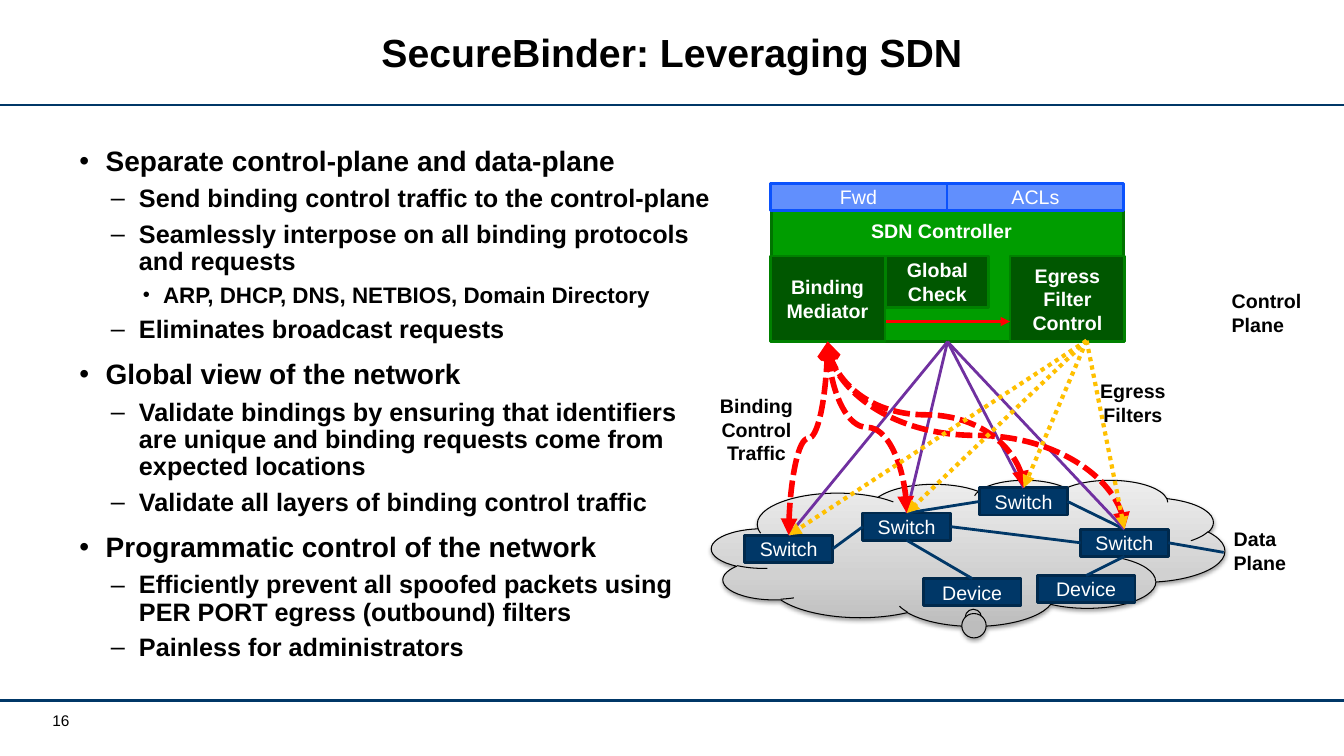
from lxml.etree import SubElement
from pptx import Presentation
from pptx.dml.color import RGBColor
from pptx.enum.dml import MSO_LINE
from pptx.enum.shapes import MSO_CONNECTOR, MSO_SHAPE
from pptx.enum.text import MSO_ANCHOR, PP_ALIGN
from pptx.oxml import parse_xml
from pptx.oxml.ns import nsdecls, qn
from pptx.util import Inches, Pt

NAVY, PURPLE, RED, AMBER = "003767", "7030A0", "FF0000", "FFC000"
GREEN, DARK_GREEN, BLUE = "009D00", "005700", "618FFD"
BLACK, WHITE = "000000", "FFFFFF"
COLUMNS, ROWS = 133.33, 75
TOP, LEFT, BOTTOM, RIGHT = range(4)

# Per level: left indent, hanging indent, size, space before, bullet, bullet percent
LEVELS = [(0.26, 0.26, 20, 12, "•", 100),
          (0.59, 0.28, 18, 6, "–", 100),
          (0.83, 0.2, 16, 6, "•", 90)]
POINTS = [
    (0, "Separate control-plane and data-plane"),
    (1, "Send binding control traffic to the control-plane"),
    (1, "Seamlessly interpose on all binding protocols and requests"),
    (2, "ARP, DHCP, DNS, NETBIOS, Domain Directory"),
    (1, "Eliminates broadcast requests"),
    (0, "Global view of the network"),
    (1, "Validate bindings by ensuring that identifiers are unique and "
        "binding requests come from expected locations"),
    (1, "Validate all layers of binding control traffic"),
    (0, "Programmatic control of the network"),
    (1, "Efficiently prevent all spoofed packets using PER PORT egress (outbound) filters"),
    (1, "Painless for administrators"),
]


def cells(count):
    """Length of a number of grid cells; a cell is a tenth of an inch."""
    return Inches(count / 10)


def within(box, left, top, width, height):
    return box[0] + left, box[1] + top, width, height


def colour(value):
    return RGBColor.from_string(value)


def add_span(para, text, size, ink, bold=False):
    span = para.add_run()
    span.text = text
    span.font.name, span.font.size, span.font.bold = "Arial", Pt(size), bold
    span.font.color.rgb = colour(ink)


def add_label(page, box, lines, size=14, ink=BLACK, bold=True, align=PP_ALIGN.LEFT, wrap=True):
    label = page.shapes.add_textbox(*map(cells, box))
    frame = label.text_frame
    frame.word_wrap = wrap
    for number, line in enumerate(lines):
        para = frame.add_paragraph() if number else frame.paragraphs[0]
        para.alignment = align
        add_span(para, line, size, ink, bold)
    return label


def add_block(page, box, fill, edge, lines=(), bold=False):
    block = page.shapes.add_shape(MSO_SHAPE.RECTANGLE, *map(cells, box))
    block.shadow.inherit = False
    block.fill.solid()
    block.fill.fore_color.rgb = colour(fill)
    block.line.color.rgb = colour(edge)
    block.line.width = Pt(2)
    frame = block.text_frame
    frame.word_wrap = True
    frame.vertical_anchor = MSO_ANCHOR.MIDDLE
    para = frame.paragraphs[0]
    para.alignment = PP_ALIGN.CENTER
    for number, line in enumerate(lines):
        if number:
            para.add_line_break()
        add_span(para, line, 14, WHITE, bold)
    return block


def style_line(line, ink, width, dash=None, head=None, tail=None):
    line.line.color.rgb = colour(ink)
    line.line.width = Pt(width)
    if dash:
        line.line.dash_style = dash
    for tag, kind in (("a:headEnd", head), ("a:tailEnd", tail)):
        if kind:
            SubElement(line.get_or_add_ln(), qn(tag)).set("type", kind)
    SubElement(line._element.spPr, qn("a:effectLst"))


def add_link(page, start, end, ink, width, **style):
    """Straight line; an end is a (shape, side) pair or a (column, row) point."""
    def is_joined(point):
        return hasattr(point[0], "shape_id")

    ends = [(0, 0) if is_joined(point) else map(cells, point) for point in (start, end)]
    line = page.shapes.add_connector(MSO_CONNECTOR.STRAIGHT, *ends[0], *ends[1])
    if is_joined(start):
        line.begin_connect(*start)
    if is_joined(end):
        line.end_connect(*end)
    style_line(line, ink, width, **style)


def add_rising_curve(page, lower, upper):
    """Curve that leaves the top of one block and rises to the bottom of another."""
    x1, y1 = lower.left + lower.width // 2, lower.top
    x2, y2 = upper.left + upper.width // 2, upper.top + upper.height
    rise, run = y1 - y2, abs(x2 - x1)
    left, top = (x1 + x2 - rise) // 2, (y1 + y2 - run) // 2
    curve = page.shapes.add_connector(MSO_CONNECTOR.CURVE, left, top, left + rise, top + run)
    turn = {"rot": "16200000", "flipV": "1"}
    if x1 < x2:
        turn = {"rot": "5400000", "flipH": "1", "flipV": "1"}
    for key, value in turn.items():
        curve._element.spPr.find(qn("a:xfrm")).set(key, value)
    style_line(curve, RED, 4, dash=MSO_LINE.SQUARE_DOT, head="triangle", tail="arrow")


def add_cloud(page, box):
    cloud = page.shapes.add_shape(MSO_SHAPE.CLOUD_CALLOUT, *map(cells, box))
    cloud.adjustments[0], cloud.adjustments[1] = 0.01, 0.44
    cloud.line.color.rgb = colour(BLACK)
    cloud.line.width = Pt(0.75)
    cloud.fill.background()
    properties = cloud._element.spPr
    stops = "".join(f'<a:gs pos="{share}000"><a:srgbClr val="{tone}"/></a:gs>'
                    for share, tone in ((0, "BDBDBD"), (35, "D1D1D1"), (100, "EEEEEE")))
    properties.replace(properties.find(qn("a:noFill")), parse_xml(
        f'<a:gradFill {nsdecls("a")}><a:gsLst>{stops}</a:gsLst>'
        '<a:lin ang="16200000" scaled="0"/></a:gradFill>'))
    properties.append(parse_xml(
        f'<a:effectLst {nsdecls("a")}><a:outerShdw blurRad="{Pt(3.1)}" dist="{Pt(1.6)}" '
        'dir="5400000" rotWithShape="0"><a:srgbClr val="000000"><a:alpha val="38000"/>'
        '</a:srgbClr></a:outerShdw></a:effectLst>'))


def add_frame(page, box):
    """Title, the two rules and the page number."""
    title = page.shapes.title
    place = within(box, 13.7, 1.1, 105.9, 8.9)
    title.left, title.top, title.width, title.height = map(cells, place)
    title.text_frame.vertical_anchor = MSO_ANCHOR.MIDDLE
    para = title.text_frame.paragraphs[0]
    para.alignment, para.line_spacing = PP_ALIGN.CENTER, Pt(28)
    add_span(para, "SecureBinder: Leveraging SDN", 28, BLACK, True)
    for row in (10.4, 69.5):
        add_link(page, (box[0], row), (box[0] + box[2], row), NAVY, 1.75)
    number = add_label(page, within(box, 4.7, 70.6, 15.9, 2.4), ["16"], size=11, bold=False)
    frame = number.text_frame
    frame.margin_left = Inches(0.05)
    frame.margin_top = frame.margin_right = frame.margin_bottom = 0


def add_points(page, box):
    frame = page.shapes.add_textbox(*map(cells, box)).text_frame
    frame.word_wrap = True
    for number, (level, text) in enumerate(POINTS):
        left, hang, size, before, bullet, percent = LEVELS[level]
        para = frame.add_paragraph() if number else frame.paragraphs[0]
        para.level, para.line_spacing, para.space_before = level, 0.9, Pt(before)
        add_span(para, text, size, BLACK, True)
        properties = para._p.get_or_add_pPr()
        properties.set("marL", str(Inches(left)))
        properties.set("indent", str(-Inches(hang)))
        SubElement(properties, qn("a:buSzPct")).set("val", f"{percent}000")
        SubElement(properties, qn("a:buFont")).set("typeface", "Arial")
        SubElement(properties, qn("a:buChar")).set("char", bullet)


def add_data_plane(page, box):
    """Draws the cloud network and returns its switches from left to right."""
    def node(name, left, top, width):
        return add_block(page, within(box, left, top, width, 2.7), NAVY, "00294C", [name])

    add_cloud(page, box)
    switches = [node("Switch", left, top, 8.7)
                for left, top in ((3.3, 5.5), (15, 3.3), (26.6, 0.8), (36.6, 4.9))]
    devices = [node("Device", left, top, 9.7) for left, top in ((21, 9.8), (32.3, 9.5))]
    first, second, third, fourth = switches
    for start, end in (((first, RIGHT), (second, LEFT)),
                       ((second, RIGHT), (fourth, LEFT)),
                       ((second, BOTTOM), (devices[0], TOP)),
                       ((box[0] + 50.8, box[1] + 7.2), (fourth, RIGHT)),
                       ((devices[1], TOP), (fourth, BOTTOM)),
                       ((third, RIGHT), (fourth, TOP)),
                       ((second, TOP), (third, LEFT))):
        add_link(page, start, end, NAVY, 2)
    return switches


def add_control_plane(page, box, switches):
    """Draws the controller and its traffic down to the switches."""
    def module(lines, left, width, height):
        return add_block(page, within(box, left, 7.2, width, height),
                         DARK_GREEN, "008100", lines, True)

    controller = add_block(page, within(box, 0.1, 2.7, 35, 13), GREEN, "007400")
    half = box[2] / 2
    for number, name in enumerate(("Fwd", "ACLs")):
        add_block(page, within(box, number * half, 0, half, 2.65), BLUE, "0B52FC", [name])
    for switch in switches:
        add_link(page, (controller, BOTTOM), (switch, TOP), PURPLE, 2)
    mediator = module(["Binding Mediator"], 0, 11.4, 8.5)
    add_label(page, within(box, 5.9, 3, 22.2, 3.4), ["SDN Controller"],
              ink=WHITE, align=PP_ALIGN.CENTER)
    module(["Egress Filter", "Control"], 23.8, 11.4, 8.5)
    for switch in switches:
        add_rising_curve(page, switch, mediator)
    row = box[1] + 13.7
    add_link(page, (box[0] + 11.5, row), (box[0] + 23.8, row), RED, 2.25, tail="triangle")
    filter_source = box[0] + 31.4, box[1] + 15.6
    for switch in reversed(switches):
        add_link(page, filter_source, (switch, TOP), AMBER, 3,
                 dash=MSO_LINE.ROUND_DOT, tail="triangle")
    module(["Global", "Check"], 11.5, 10.2, 5.1)


def add_plane_labels(page, box):
    add_label(page, within(box, 50.8, 10, 9.2, 5.7), ["Control", "Plane"])
    add_label(page, within(box, 51, 33.6, 9.2, 5.7), ["Data", "Plane"])
    add_label(page, within(box, 0, 20.4, 9.3, 8.1), ["Binding", "Control", "Traffic"],
              align=PP_ALIGN.CENTER, wrap=False)
    add_label(page, within(box, 37.7, 18.9, 8.6, 5.7), ["Egress", "Filters"],
              align=PP_ALIGN.CENTER, wrap=False)


def main():
    deck = Presentation()
    deck.slide_width, deck.slide_height = cells(COLUMNS), cells(ROWS)
    page = deck.slides.add_slide(deck.slide_layouts[5])
    add_frame(page, (0, 0, COLUMNS, ROWS))
    add_points(page, (6.9, 14.1, 65.2, 54.7))
    switches = add_data_plane(page, (70.6, 47.6, 50.9, 14.5))
    add_control_plane(page, (76.4, 18.2, 35.1, 15.7), switches)
    add_plane_labels(page, (70.4, 18.2, 60.2, 39.3))
    deck.save("out.pptx")


if __name__ == "__main__":
    main()
